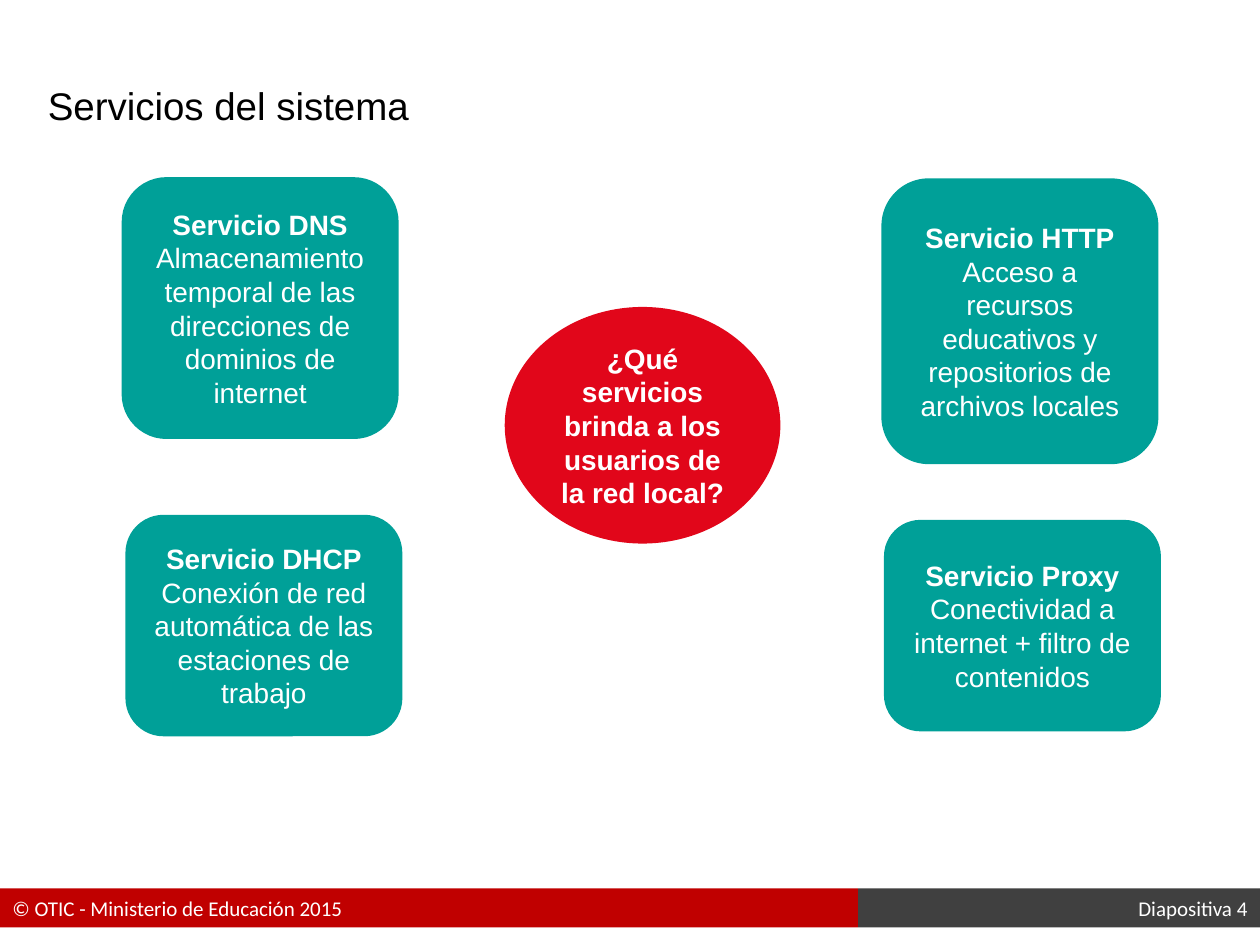
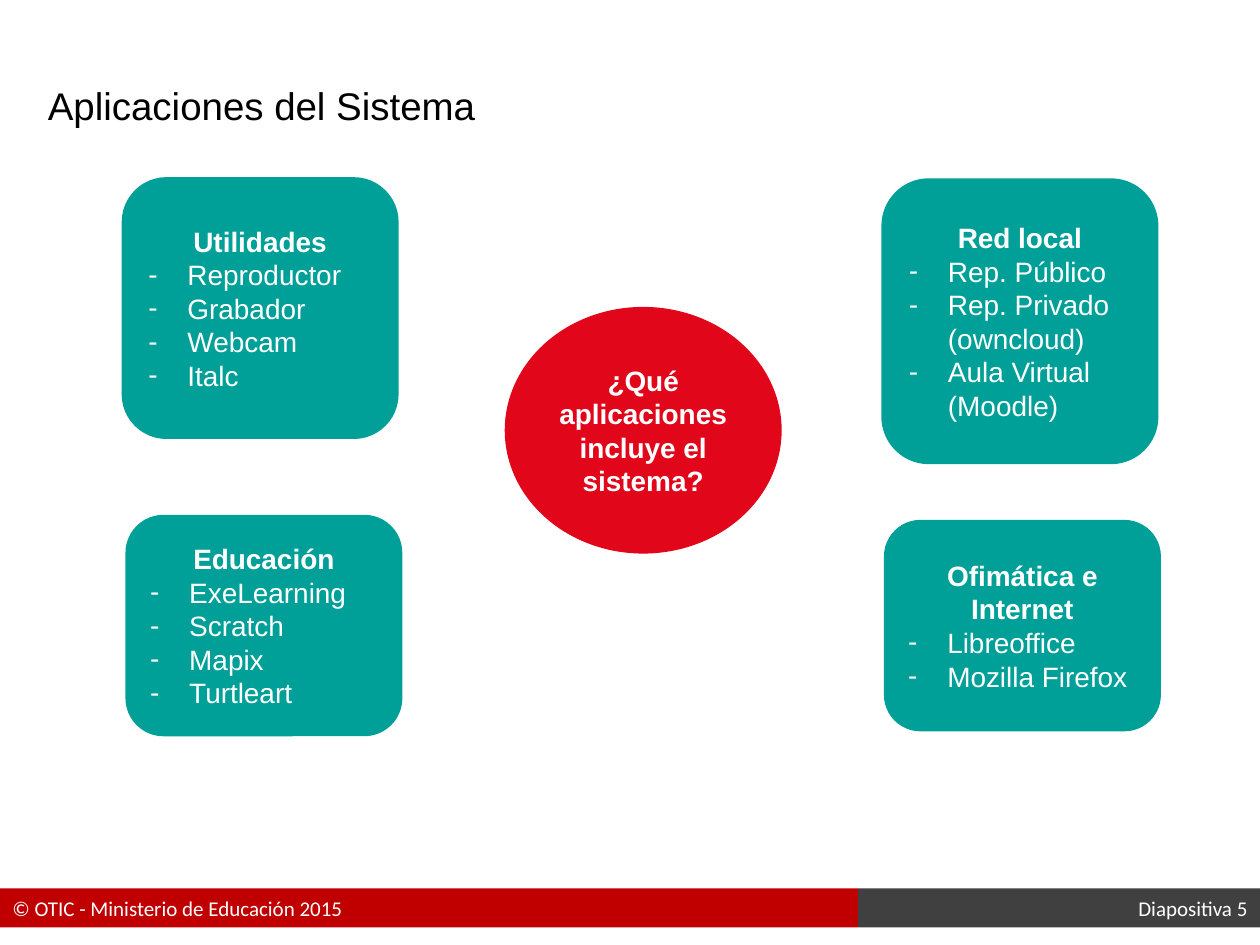
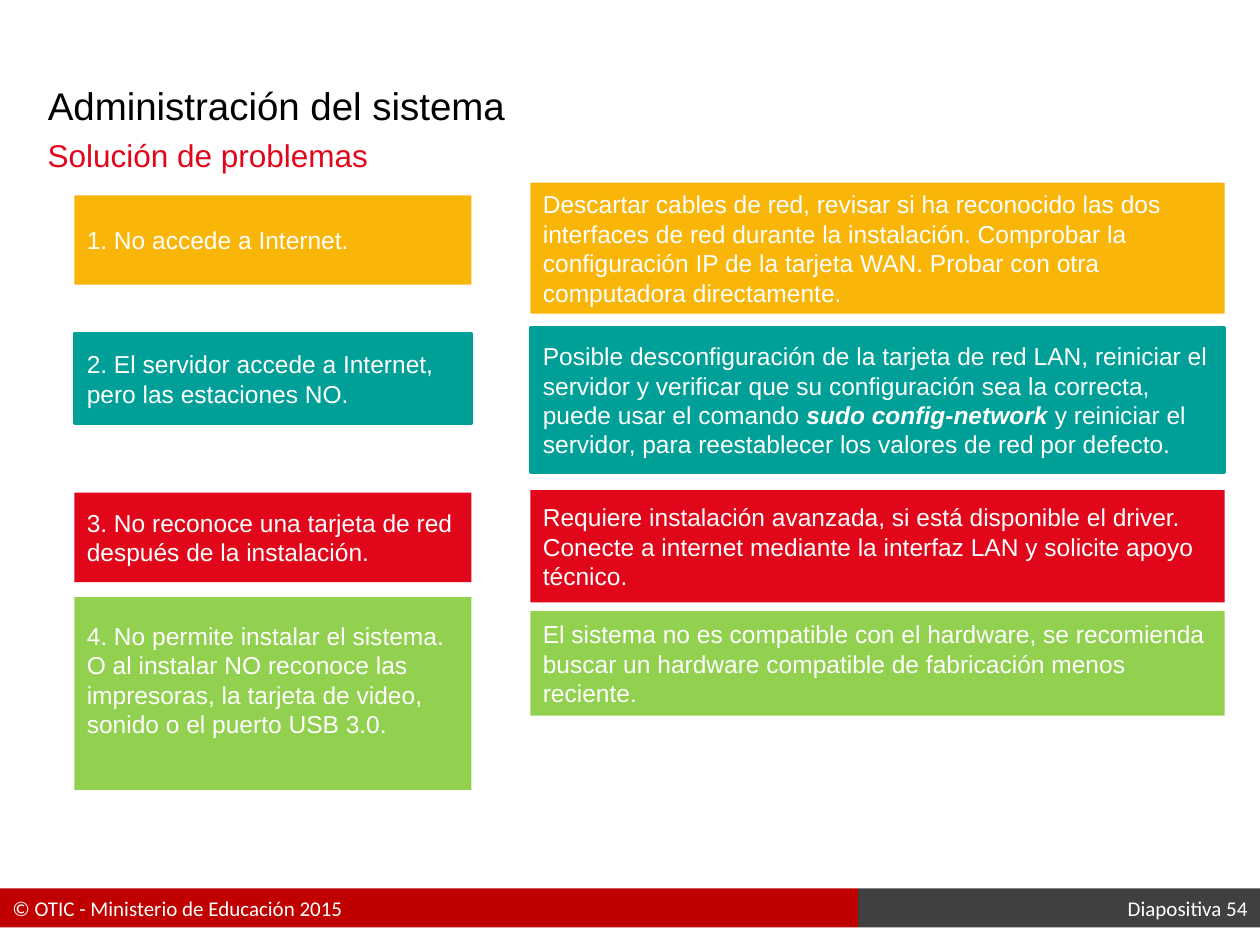
from dataclasses import dataclass
from typing import NamedTuple

from lxml.etree import SubElement
from pptx import Presentation
from pptx.dml.color import RGBColor as Rgb
from pptx.enum.shapes import MSO_SHAPE as Preset
from pptx.enum.text import MSO_ANCHOR as Anchor, MSO_AUTO_SIZE as AutoSize, PP_ALIGN as Align
from pptx.oxml.ns import qn
from pptx.util import Pt

PX = 9144
COLORS = {
    "black": "000000",
    "white": "FFFFFF",
    "red": "E1061A",
    "teal": "00A098",
    "amber": "FAB608",
    "green": "92D050",
    "footer_red": "C00000",
    "footer_gray": "404040",
}
FONT = "Arial"
FOOTER_FONT = "Calibri"
BULLET_INDENT = 31
TEXT_LINE = 22
INSET = 5
COMMAND = "sudo config-network"
COPYRIGHT = "© OTIC - Ministerio de Educación 2015"


class Box(NamedTuple):
    left: int
    top: int
    width: int
    height: int


TITLE_BOX = Box(28, 60, 906, 47)
SUBTITLE_BOX = Box(28, 103, 906, 40)
TOPIC_BOXES = (
    Box(701, 143, 217, 224),
    Box(703, 414, 217, 165),
    Box(98, 142, 217, 205),
    Box(101, 410, 217, 173),
)
PROBLEM_LEFT, PROBLEM_WIDTH = 59, 315
SOLUTION_LEFT, SOLUTION_WIDTH = 421, 551
FOOTER_TOP, FOOTER_HEIGHT, FOOTER_SPLIT, SLIDE_WIDTH = 705, 31, 681, 1000


@dataclass(frozen=True)
class Topic:
    heading: str
    details: tuple[str, ...]


@dataclass(frozen=True)
class TopicMap:
    title: str
    number: int
    question: str
    question_box: Box
    topics: tuple[Topic, ...]
    bulleted: bool


@dataclass(frozen=True)
class Issue:
    color: str
    problem: str
    problem_top: int
    problem_height: int
    solution: str
    solution_top: int
    solution_height: int
    outlined: bool = False
    lines_below: int = 0


TOPIC_MAPS = (
    TopicMap(
        "Servicios del sistema", 4,
        "¿Qué servicios brinda a los usuarios de la red local?",
        Box(402, 245, 216, 185),
        (
            Topic("Servicio HTTP", ("Acceso a recursos educativos y repositorios de archivos locales",)),
            Topic("Servicio Proxy", ("Conectividad a internet + filtro de contenidos",)),
            Topic("Servicio DNS", ("Almacenamiento temporal de las direcciones de dominios de internet",)),
            Topic("Servicio DHCP", ("Conexión de red automática de las estaciones de trabajo",)),
        ),
        bulleted=False,
    ),
    TopicMap(
        "Aplicaciones del Sistema", 5,
        "¿Qué aplicaciones incluye el sistema?",
        Box(402, 245, 217, 193),
        (
            Topic("Red local", ("Rep. Público", "Rep. Privado (owncloud)", "Aula Virtual (Moodle)")),
            Topic("Ofimática e Internet", ("Libreoffice", "Mozilla Firefox")),
            Topic("Utilidades", ("Reproductor", "Grabador", "Webcam", "Italc")),
            Topic("Educación", ("ExeLearning", "Scratch", "Mapix", "Turtleart")),
        ),
        bulleted=True,
    ),
)

ISSUES = (
    Issue(
        "amber", "1. No accede a Internet.", 155, 71,
        "Descartar cables de red, revisar si ha reconocido las dos interfaces de red durante la "
        "instalación. Comprobar la configuración IP de la tarjeta WAN. Probar con otra "
        "computadora directamente.", 145, 104,
    ),
    Issue(
        "teal", "2. El servidor accede a Internet, pero las estaciones NO.", 265, 71,
        "Posible desconfiguración de la tarjeta de red LAN, reiniciar el servidor y verificar que "
        "su configuración sea la correcta, puede usar el comando sudo config-network y reiniciar "
        "el servidor, para reestablecer los valores de red por defecto.", 260, 115,
        outlined=True,
    ),
    Issue(
        "red", "3. No reconoce una tarjeta de red después de la instalación.", 391, 71,
        "Requiere instalación avanzada, si está disponible el driver. Conecte a internet mediante "
        "la interfaz LAN y solicite apoyo técnico.", 389, 89,
    ),
    Issue(
        "green",
        "4. No permite instalar el sistema.\nO al instalar NO reconoce las impresoras, la tarjeta "
        "de video, sonido o el puerto USB 3.0.", 474, 153,
        "El sistema no es compatible con el hardware, se recomienda buscar un hardware compatible "
        "de fabricación menos reciente.", 485, 83,
        lines_below=1,
    ),
)


def rgb(color: str) -> Rgb:
    return Rgb.from_string(COLORS[color])


def emu(box: Box) -> list[int]:
    return [length * PX for length in box]


def format_text(frame, size: int, color: str = "white", align=Align.LEFT,
                bold: bool = False, font: str = FONT) -> None:
    frame.word_wrap = True
    for paragraph in frame.paragraphs:
        paragraph.alignment = align
        for run in paragraph.runs:
            run.font.name = font
            run.font.size = Pt(size)
            run.font.bold = bold
            run.font.color.rgb = rgb(color)


def add_panel(slide, preset, box: Box, color: str, text: str, outlined: bool = False):
    panel = slide.shapes.add_shape(preset, *emu(box))
    panel.shadow.inherit = False
    panel.fill.solid()
    panel.fill.fore_color.rgb = rgb(color)
    if outlined:
        panel.line.color.rgb = rgb(color)
        panel.line.width = Pt(2)
    else:
        panel.line.fill.background()
    panel.text_frame.text = text
    panel.text_frame.vertical_anchor = Anchor.MIDDLE
    return panel


def add_bullet(paragraph) -> None:
    properties = paragraph._p.get_or_add_pPr()
    properties.set("marL", str(BULLET_INDENT * PX))
    properties.set("indent", str(-BULLET_INDENT * PX))
    SubElement(properties, qn("a:buFont"), typeface=FONT)
    SubElement(properties, qn("a:buChar"), char="-")


def add_footer(slide, number: int) -> None:
    owner = add_panel(slide, Preset.RECTANGLE, Box(0, FOOTER_TOP, FOOTER_SPLIT, FOOTER_HEIGHT),
                      "footer_red", COPYRIGHT)
    format_text(owner.text_frame, 12, font=FOOTER_FONT)
    page = add_panel(slide, Preset.RECTANGLE,
                     Box(FOOTER_SPLIT, FOOTER_TOP, SLIDE_WIDTH - FOOTER_SPLIT, FOOTER_HEIGHT),
                     "footer_gray", f"Diapositiva {number}")
    format_text(page.text_frame, 12, align=Align.RIGHT, font=FOOTER_FONT)


def start_slide(deck, title: str):
    slide = deck.slides.add_slide(deck.slide_layouts[5])
    heading = slide.shapes.title
    heading.left, heading.top, heading.width, heading.height = emu(TITLE_BOX)
    heading.text_frame.text = title
    heading.text_frame.auto_size = AutoSize.NONE
    heading.text_frame.vertical_anchor = Anchor.TOP
    format_text(heading.text_frame, 22, "black")
    return slide


def add_topic(slide, topic: Topic, box: Box, bulleted: bool) -> None:
    card = add_panel(slide, Preset.ROUNDED_RECTANGLE, box, "teal",
                     "\n".join((topic.heading, *topic.details)), outlined=True)
    format_text(card.text_frame, 16, align=Align.CENTER)
    heading, *details = card.text_frame.paragraphs
    heading.runs[0].font.bold = True
    if bulleted:
        for detail in details:
            detail.alignment = Align.LEFT
            add_bullet(detail)


def add_topic_map(deck, topic_map: TopicMap) -> None:
    slide = start_slide(deck, topic_map.title)
    question = add_panel(slide, Preset.OVAL, topic_map.question_box, "red",
                         topic_map.question, outlined=True)
    format_text(question.text_frame, 16, align=Align.CENTER, bold=True)
    for topic, box in zip(topic_map.topics, TOPIC_BOXES):
        add_topic(slide, topic, box, topic_map.bulleted)
    add_footer(slide, topic_map.number)


def add_issue_panel(slide, box: Box, issue: Issue, text: str):
    panel = add_panel(slide, Preset.PENTAGON, box, issue.color, text, issue.outlined)
    panel.adjustments[0] = 0
    format_text(panel.text_frame, 14)
    return panel


def emphasize_command(frame) -> None:
    paragraph = frame.paragraphs[0]
    before, command, after = paragraph.text.partition(COMMAND)
    if not command:
        return
    paragraph.text = before
    for piece in (command, after):
        paragraph.add_run().text = piece
    format_text(frame, 14)
    paragraph.runs[1].font.bold = True
    paragraph.runs[1].font.italic = True


def add_troubleshooting(deck) -> None:
    slide = start_slide(deck, "Administración del sistema")
    subtitle = slide.shapes.add_textbox(*emu(SUBTITLE_BOX))
    subtitle.text_frame.text = "Solución de problemas"
    format_text(subtitle.text_frame, 18, "red")
    for issue in ISSUES:
        problem_box = Box(PROBLEM_LEFT, issue.problem_top, PROBLEM_WIDTH, issue.problem_height)
        problem = add_issue_panel(slide, problem_box, issue, issue.problem)
        problem.text_frame.margin_bottom = (INSET + issue.lines_below * TEXT_LINE) * PX
        solution_box = Box(SOLUTION_LEFT, issue.solution_top, SOLUTION_WIDTH, issue.solution_height)
        solution = add_issue_panel(slide, solution_box, issue, issue.solution)
        emphasize_command(solution.text_frame)
    add_footer(slide, 54)


def main() -> None:
    deck = Presentation()
    deck.slide_width, deck.slide_height = SLIDE_WIDTH * PX, 750 * PX
    for topic_map in TOPIC_MAPS:
        add_topic_map(deck, topic_map)
    add_troubleshooting(deck)
    deck.save("out.pptx")


if __name__ == "__main__":
    main()
